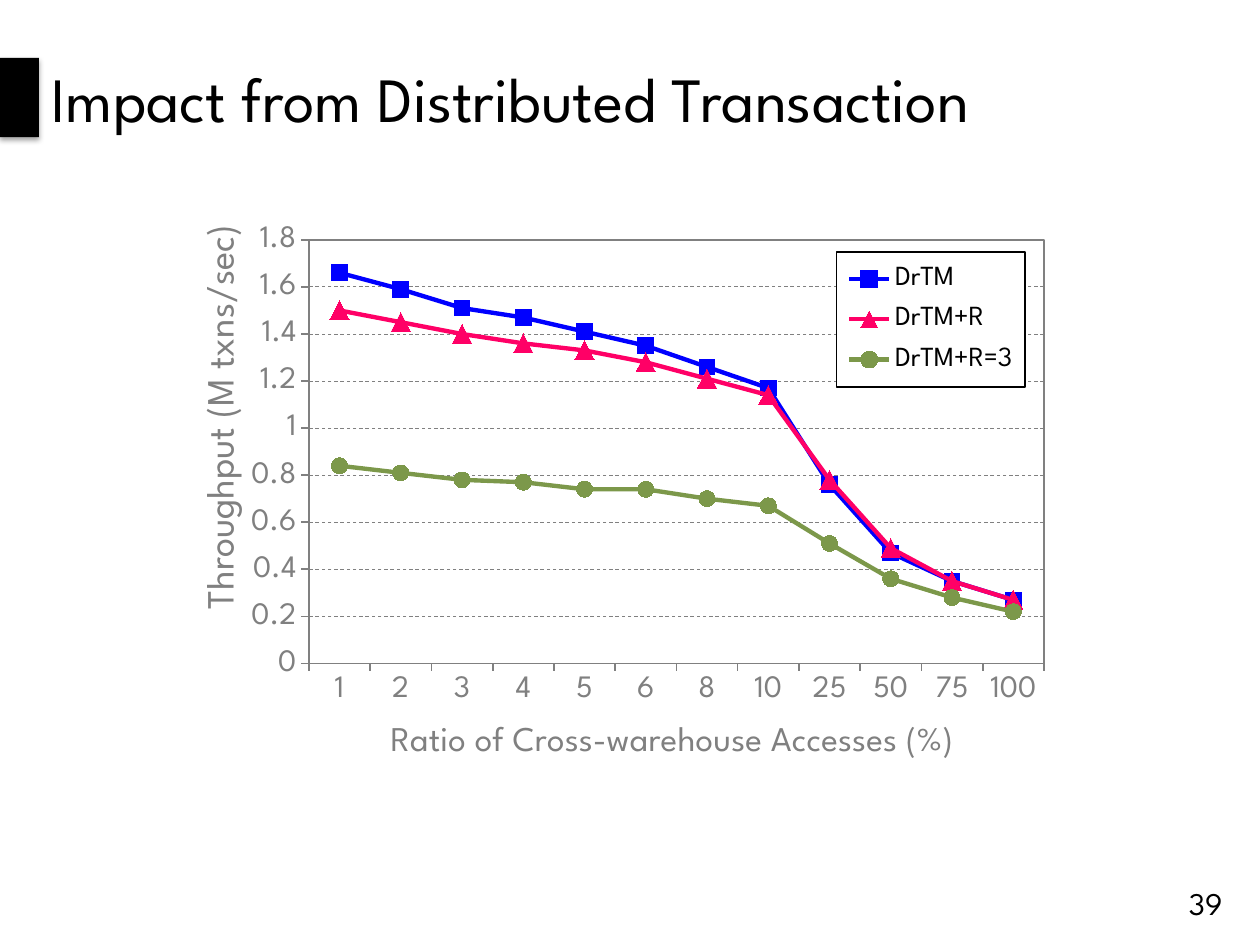
"""Build the slide on the throughput impact of distributed transactions."""
from dataclasses import dataclass

from pptx import Presentation
from pptx.chart.data import CategoryChartData
from pptx.dml.color import RGBColor
from pptx.enum.chart import XL_CHART_TYPE, XL_LEGEND_POSITION, XL_MARKER_STYLE, XL_TICK_MARK
from pptx.enum.dml import MSO_LINE
from pptx.enum.shapes import MSO_SHAPE
from pptx.enum.text import MSO_ANCHOR, PP_ALIGN
from pptx.oxml import parse_xml
from pptx.oxml.ns import nsdecls, qn
from pptx.util import Inches, Pt

LINE_MARKERS = XL_CHART_TYPE.LINE_MARKERS
LEGEND_RIGHT = XL_LEGEND_POSITION.RIGHT
SQUARE, TRIANGLE, CIRCLE = XL_MARKER_STYLE.SQUARE, XL_MARKER_STYLE.TRIANGLE, XL_MARKER_STYLE.CIRCLE
TICK_OUT, TICK_NONE = XL_TICK_MARK.OUTSIDE, XL_TICK_MARK.NONE
DASH = MSO_LINE.DASH
RECTANGLE = MSO_SHAPE.RECTANGLE
MIDDLE = MSO_ANCHOR.MIDDLE
LEFT, RIGHT = PP_ALIGN.LEFT, PP_ALIGN.RIGHT


@dataclass(frozen=True)
class Theme:
    font: str = "League Spartan"
    black: str = "000000"
    gray: str = "808080"
    white: str = "FFFFFF"
    blue: str = "0000FF"
    pink: str = "FF0066"
    green: str = "7C984A"
    title: int = 36
    value_title: int = 22
    category_title: int = 20
    body: int = 18
    legend: int = 16


@dataclass(frozen=True)
class Curve:
    name: str
    color: str
    marker: int
    size: int
    values: tuple


T = Theme()
RATIOS = (1, 2, 3, 4, 5, 6, 8, 10, 25, 50, 75, 100)
CURVES = (
    Curve("DrTM", T.blue, SQUARE, 9,
          (1.66, 1.59, 1.51, 1.47, 1.41, 1.35, 1.26, 1.17, 0.76, 0.47, 0.35, 0.27)),
    Curve("DrTM+R", T.pink, TRIANGLE, 11,
          (1.5, 1.45, 1.4, 1.36, 1.33, 1.28, 1.21, 1.14, 0.78, 0.49, 0.35, 0.27)),
    Curve("DrTM+R=3", T.green, CIRCLE, 9,
          (0.84, 0.81, 0.78, 0.77, 0.74, 0.74, 0.7, 0.67, 0.51, 0.36, 0.28, 0.22)),
)


def set_font(font, size: int, color: str) -> None:
    font.name, font.size, font.bold = T.font, Pt(size), False
    font.color.rgb = RGBColor.from_string(color)


def set_line(line, color: str, width: float) -> None:
    line.color.rgb = RGBColor.from_string(color)
    line.width = Pt(width)


def add_text(s, text: str, box: tuple, *, size: int, align=LEFT, wrap: bool = True) -> None:
    tf = s.shapes.add_textbox(*map(Inches, box)).text_frame
    tf.word_wrap, tf.vertical_anchor = wrap, MIDDLE
    p = tf.paragraphs[0]
    p.alignment = align
    r = p.add_run()
    r.text = text
    set_font(r.font, size, T.black)


def add_marker_block(s, box: tuple) -> None:
    sp = s.shapes.add_shape(RECTANGLE, *map(Inches, box))
    sp.fill.solid()
    sp.fill.fore_color.rgb = RGBColor.from_string(T.black)
    sp.line.fill.background()
    sp.shadow.inherit = False
    sp._element.spPr.find(qn("a:effectLst")).append(parse_xml(
        f'<a:outerShdw {nsdecls("a")} blurRad="{Pt(3.1)}" dist="{Pt(1.8)}" dir="5400000">'
        f'<a:srgbClr val="{T.black}"><a:alpha val="35000"/></a:srgbClr></a:outerShdw>'))


def layout_xml(x: float, y: float, size: tuple = (), inner: bool = False):
    target = '<c:layoutTarget val="inner"/>' if inner else ""
    modes = '<c:xMode val="edge"/><c:yMode val="edge"/>'
    values = "".join(f'<c:{k} val="{v}"/>' for k, v in zip("xywh", (x, y, *size)))
    return parse_xml(f'<c:layout {nsdecls("c")}><c:manualLayout>{target}{modes}{values}'
                     '</c:manualLayout></c:layout>')


def place(element, layout) -> None:
    for old in element.findall(qn("c:layout")):
        element.remove(old)
    overlay = element.find(qn("c:overlay"))
    if overlay is None:
        element.insert(0, layout)
    else:
        overlay.addprevious(layout)


def frame_xml(color: str, width: float, fill: str):
    return parse_xml(
        f'<c:spPr {nsdecls("c", "a")}><a:solidFill><a:srgbClr val="{fill}"/></a:solidFill>'
        f'<a:ln w="{Pt(width)}"><a:solidFill><a:srgbClr val="{color}"/></a:solidFill></a:ln></c:spPr>')


def style_axis(axis, title: str, size: int, position: tuple) -> None:
    axis.major_tick_mark, axis.minor_tick_mark = TICK_OUT, TICK_NONE
    set_line(axis.format.line, T.gray, 1)
    set_font(axis.tick_labels.font, T.body, T.gray)
    r = axis.axis_title.text_frame.paragraphs[0].add_run()
    r.text = title
    set_font(r.font, size, T.gray)
    place(axis.axis_title._element, layout_xml(*position))


def style_curve(series, curve: Curve) -> None:
    series.smooth = False
    set_line(series.format.line, curve.color, 2.5)
    marker = series.marker
    marker.style, marker.size = curve.marker, curve.size
    marker.format.fill.solid()
    marker.format.fill.fore_color.rgb = RGBColor.from_string(curve.color)
    set_line(marker.format.line, curve.color, 0.75)


def add_throughput_chart(s, box: tuple) -> None:
    data = CategoryChartData()
    data.categories = [str(ratio) for ratio in RATIOS]
    for curve in CURVES:
        data.add_series(curve.name, curve.values)
    chart = s.shapes.add_chart(LINE_MARKERS, *map(Inches, box), data).chart
    chart.has_title = False
    set_font(chart.font, T.body, T.black)
    chart.plots[0].vary_by_categories = False
    for series, curve in zip(chart.plots[0].series, CURVES):
        style_curve(series, curve)

    style_axis(chart.category_axis, "Ratio of Cross-warehouse Accesses (%)",
               T.category_title, (0.25, 0.92))
    axis = chart.value_axis
    style_axis(axis, "Throughput (M txns/sec)", T.value_title, (0.05, 0.08))
    axis.minimum_scale, axis.maximum_scale, axis.major_unit = 0, 1.8, 0.2
    axis.tick_labels.number_format = "General"
    axis.tick_labels.number_format_is_linked = False
    axis.has_major_gridlines = True
    grid = axis.major_gridlines.format.line
    set_line(grid, T.gray, 0.5)
    grid.dash_style = DASH

    plot_area = chart._chartSpace.chart.plotArea
    place(plot_area, layout_xml(0.17, 0.11, (0.78, 0.72), inner=True))
    plot_area.append(frame_xml(T.gray, 1, T.white))

    chart.has_legend = True
    legend = chart.legend
    legend.position, legend.include_in_layout = LEGEND_RIGHT, False
    set_font(legend.font, T.legend, T.black)
    place(legend._element, layout_xml(0.73, 0.13, (0.2, 0.23)))
    legend._element.find(qn("c:overlay")).addnext(frame_xml(T.black, 1, T.white))


def main() -> None:
    prs = Presentation()
    prs.slide_width, prs.slide_height = Inches(10), Inches(7.5)
    s = prs.slides.add_slide(prs.slide_layouts[6])
    add_text(s, "Impact from Distributed Transaction", (0.31, 0, 9.69, 1.55), size=T.title)
    add_marker_block(s, (0, 0.46, 0.31, 0.63))
    add_text(s, "39", (9.33, 6.97, 0.47, 0.4), size=T.body, align=RIGHT, wrap=False)
    add_throughput_chart(s, (1.18, 1.39, 7.48, 4.72))
    prs.save("out.pptx")


if __name__ == "__main__":
    main()
